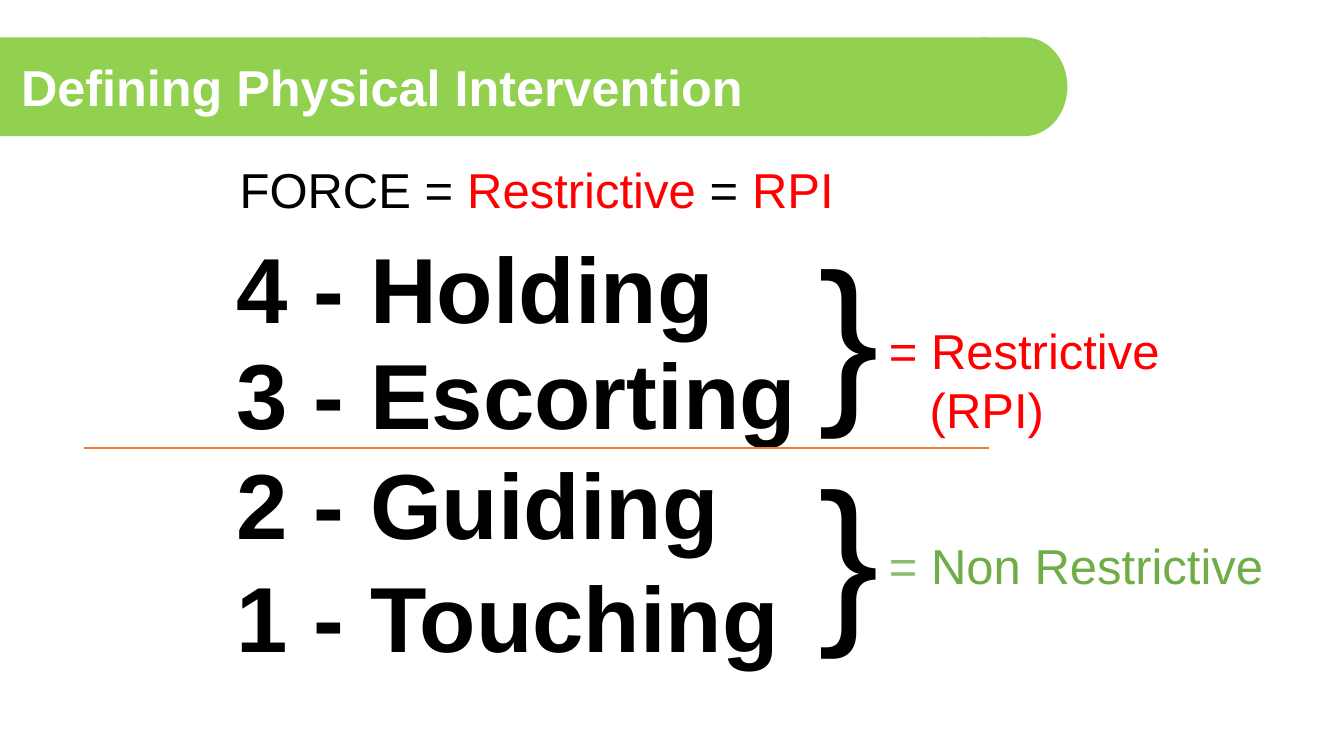
from dataclasses import dataclass

from lxml.etree import SubElement
from pptx import Presentation
from pptx.dml.color import RGBColor
from pptx.enum.shapes import MSO_CONNECTOR, MSO_SHAPE
from pptx.enum.text import MSO_ANCHOR, MSO_AUTO_SIZE, PP_ALIGN
from pptx.oxml.ns import qn
from pptx.util import Cm, Pt

BLACK = RGBColor(0x00, 0x00, 0x00)
WHITE = RGBColor(0xFF, 0xFF, 0xFF)
RED = RGBColor(0xFF, 0x00, 0x00)
GREEN = RGBColor(0x70, 0xAD, 0x47)
PALE_GREEN = RGBColor(0x8C, 0xBD, 0x6B)
BANNER_GREEN = RGBColor(0x92, 0xD0, 0x50)
ORANGE = RGBColor(0xED, 0x7D, 0x31)

STEP_LEFT, BRACE_LEFT, MEANING_LEFT = 5.72, 20.37, 22.15
BANNER_TOP, BANNER_HEIGHT = 0.94, 2.49


@dataclass(frozen=True)
class Span:
    text: str
    color: RGBColor = BLACK


@dataclass(frozen=True)
class Line:
    spans: tuple[Span, ...]
    indent: float = 0


@dataclass(frozen=True)
class Label:
    left: float
    top: float
    width: float
    height: float
    size: int
    lines: tuple[Line, ...]
    bold: bool = False


def step(top: float, height: float, *texts: str) -> Label:
    lines = tuple(Line((Span(text),)) for text in texts)
    return Label(STEP_LEFT, top, 20, height, 66, lines, True)


def brace(top: float) -> Label:
    return Label(BRACE_LEFT, top, 2.2, 5.82, 130, (Line((Span("}"),)),))


def meaning(top: float, height: float, *lines: Line) -> Label:
    return Label(MEANING_LEFT, top, 10.7, height, 35, lines)


STEPS = (
    step(14, 3.07, "1 - Touching"),
    step(8.36, 5.89, "3 - Escorting", "2 - Guiding"),
    step(5.69, 3.07, "4 - Holding"),
)
NOTES = (
    brace(5.41),
    meaning(7.95, 3.25, Line((Span("= Restrictive", RED),)),
            Line((Span("(RPI)", RED),), indent=1.03)),
    brace(10.95),
    meaning(13.36, 1.75,
            Line((Span("= ", PALE_GREEN), Span("Non Restrictive", GREEN)))),
    Label(5.79, 3.89, 20, 1.75, 35, (
        Line((Span("FORCE = "), Span("Restrictive", RED),
              Span(" = "), Span("RPI", RED))),)),
)


def set_attributes(target: object, values: dict[str, object]) -> None:
    for name, value in values.items():
        setattr(target, name, value)


def add_run(p, span: Span, size: int, bold: bool) -> None:
    r = p.add_run()
    r.text = span.text
    set_attributes(r.font, {"name": "Arial", "size": Pt(size), "bold": bold})
    r.font.color.rgb = span.color


def add_label(s, label: Label) -> None:
    sp = s.shapes.add_textbox(Cm(label.left), Cm(label.top),
                              Cm(label.width), Cm(label.height))
    tf = sp.text_frame
    tf.word_wrap = True
    for i, line in enumerate(label.lines):
        p = tf.add_paragraph() if i else tf.paragraphs[0]
        if line.indent:
            p._p.get_or_add_pPr().set("marL", str(Cm(line.indent)))
        for span in line.spans:
            add_run(p, span, label.size, label.bold)


def add_divider(s) -> None:
    line = s.shapes.add_connector(MSO_CONNECTOR.STRAIGHT, Cm(2.11), Cm(11.3),
                                  Cm(24.92), Cm(11.3))
    line.line.color.rgb = ORANGE
    line.line.width = Pt(1.5)
    SubElement(line._element.spPr, qn("a:effectLst"))


def add_banner(s) -> None:
    title = s.shapes.title
    set_attributes(title, {"left": Cm(0), "top": Cm(BANNER_TOP),
                           "width": Cm(24.92), "height": Cm(BANNER_HEIGHT)})
    tf = title.text_frame
    set_attributes(tf, {"margin_left": Cm(0.53), "word_wrap": True,
                        "auto_size": MSO_AUTO_SIZE.NONE,
                        "vertical_anchor": MSO_ANCHOR.MIDDLE})
    p = tf.paragraphs[0]
    p.alignment = PP_ALIGN.LEFT
    add_run(p, Span("Defining Physical Intervention", WHITE), 36, True)

    cap = s.shapes.add_shape(MSO_SHAPE.FLOWCHART_DELAY, Cm(24.74),
                             Cm(BANNER_TOP), Cm(2.16), Cm(BANNER_HEIGHT))
    cap.shadow.inherit = False
    cap.line.fill.background()
    for sp in (title, cap):
        sp.fill.solid()
        sp.fill.fore_color.rgb = BANNER_GREEN


def main() -> None:
    prs = Presentation()
    prs.slide_width, prs.slide_height = Cm(33.87), Cm(19.05)
    s = prs.slides.add_slide(prs.slide_layouts[5])

    # Steps of intervention, split by the divider
    for label in STEPS:
        add_label(s, label)
    add_divider(s)

    # Braces and their meanings
    for label in NOTES:
        add_label(s, label)

    # Title banner with its rounded end
    add_banner(s)
    prs.save("out.pptx")


if __name__ == "__main__":
    main()
